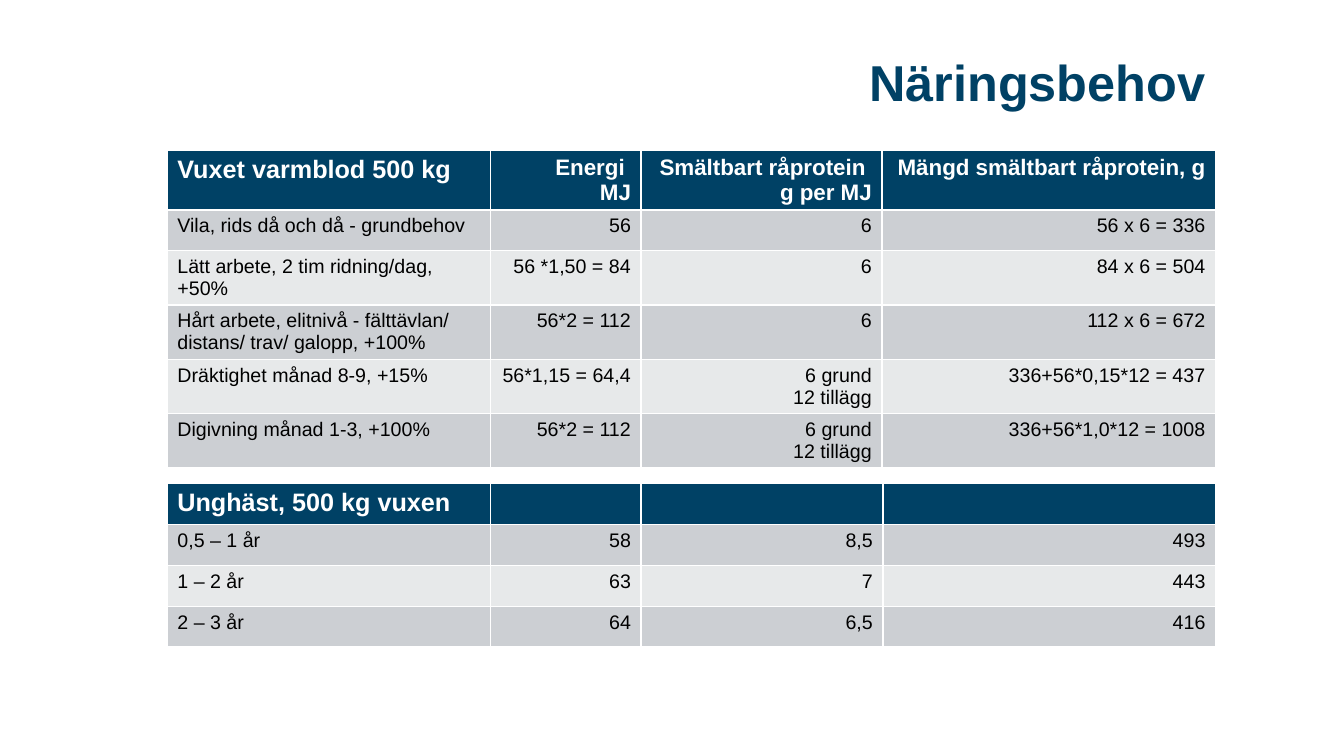
from pptx import Presentation
from pptx.dml.color import RGBColor
from pptx.enum.text import MSO_ANCHOR, MSO_AUTO_SIZE, PP_ALIGN
from pptx.util import Inches, Pt

NAVY = RGBColor(0x00, 0x41, 0x65)
GREY = RGBColor(0xCC, 0xCF, 0xD3)
PALE = RGBColor(0xE7, 0xE9, 0xEA)
WHITE = RGBColor(0xFF, 0xFF, 0xFF)
BLACK = RGBColor(0x00, 0x00, 0x00)

GRID_COLUMNS, GRID_ROWS = 160, 90
LEFT, WIDTH = 19.92, 124.8
ROW_HEIGHT = 4.86

ADULT_ROWS = [
    ["Vuxet varmblod 500 kg", "Energi \nMJ", "Smältbart råprotein \vg per MJ",
     "Mängd smältbart råprotein, g"],
    ["Vila, rids då och då - grundbehov", "56", "6", "56 x 6 = 336"],
    ["Lätt arbete, 2 tim ridning/dag, +50%", "56 *1,50 = 84", "6", "84 x 6 = 504"],
    ["Hårt arbete, elitnivå - fälttävlan/\ndistans/ trav/ galopp, +100%",
     "56*2 = 112", "6", "112 x 6 = 672"],
    ["Dräktighet månad 8-9, +15%", "56*1,15 = 64,4", "6 grund\n12 tillägg",
     "336+56*0,15*12 = 437"],
    ["Digivning månad 1-3, +100%", "56*2 = 112", "6 grund\n12 tillägg",
     "336+56*1,0*12 = 1008"],
]
YOUNG_ROWS = [
    ["Unghäst, 500 kg vuxen", "", "", ""],
    ["0,5 – 1 år", "58", "8,5", "493"],
    ["1 – 2 år", "63", "7", "443"],
    ["2 – 3 år", "64", "6,5", "416"],
]


class FeedPage:
    font_name = "Arial"

    def __init__(self, deck):
        self.page = deck.slides.add_slide(deck.slide_layouts[5])
        self.column = deck.slide_width / GRID_COLUMNS
        self.row = deck.slide_height / GRID_ROWS

    def across(self, columns):
        return round(columns * self.column)

    def down(self, rows):
        return round(rows * self.row)

    def style(self, frame, size, colour, bold, align):
        for para in frame.paragraphs:
            para.alignment = align
            para.font.name = self.font_name
            para.font.size = Pt(size)
            para.font.bold = bold
            para.font.color.rgb = colour

    def title(self, text, top, height):
        box = self.page.shapes.title
        box.left, box.top = self.across(LEFT), self.down(top)
        box.width, box.height = self.across(WIDTH), self.down(height)
        frame = box.text_frame
        frame.text = text
        frame.auto_size = MSO_AUTO_SIZE.NONE
        frame.vertical_anchor = MSO_ANCHOR.MIDDLE
        frame.paragraphs[0].line_spacing = 0.9
        self.style(frame, 36, NAVY, True, PP_ALIGN.RIGHT)

    def table(self, rows, top, widths):
        table = self.page.shapes.add_table(
            len(rows), len(widths), self.across(LEFT), self.down(top),
            self.across(WIDTH), self.down(ROW_HEIGHT * len(rows))).table
        for column, width in zip(table.columns, widths):
            column.width = self.across(width)
        for r, texts in enumerate(rows):
            table.rows[r].height = self.down(ROW_HEIGHT)
            for c, text in enumerate(texts):
                self.cell(table.cell(r, c), text, r == 0, c == 0,
                          GREY if r % 2 else PALE)

    def cell(self, cell, text, is_header, is_label, band):
        cell.fill.solid()
        cell.fill.fore_color.rgb = NAVY if is_header else band
        cell.text = text
        size = (18 if is_label else 16) if is_header else 14
        self.style(cell.text_frame, size, WHITE if is_header else BLACK,
                   is_header, PP_ALIGN.LEFT if is_label else PP_ALIGN.RIGHT)


def main():
    deck = Presentation()
    deck.slide_width, deck.slide_height = Inches(13.33), Inches(7.5)
    feed = FeedPage(deck)
    feed.table(YOUNG_ROWS, 57.6, [38.52, 17.88, 28.8, 39.6])
    feed.table(ADULT_ROWS, 17.88, [38.52, 17.88, 28.68, 39.72])
    feed.title("Näringsbehov", 3.96, 12.48)
    deck.save("out.pptx")


if __name__ == "__main__":
    main()
